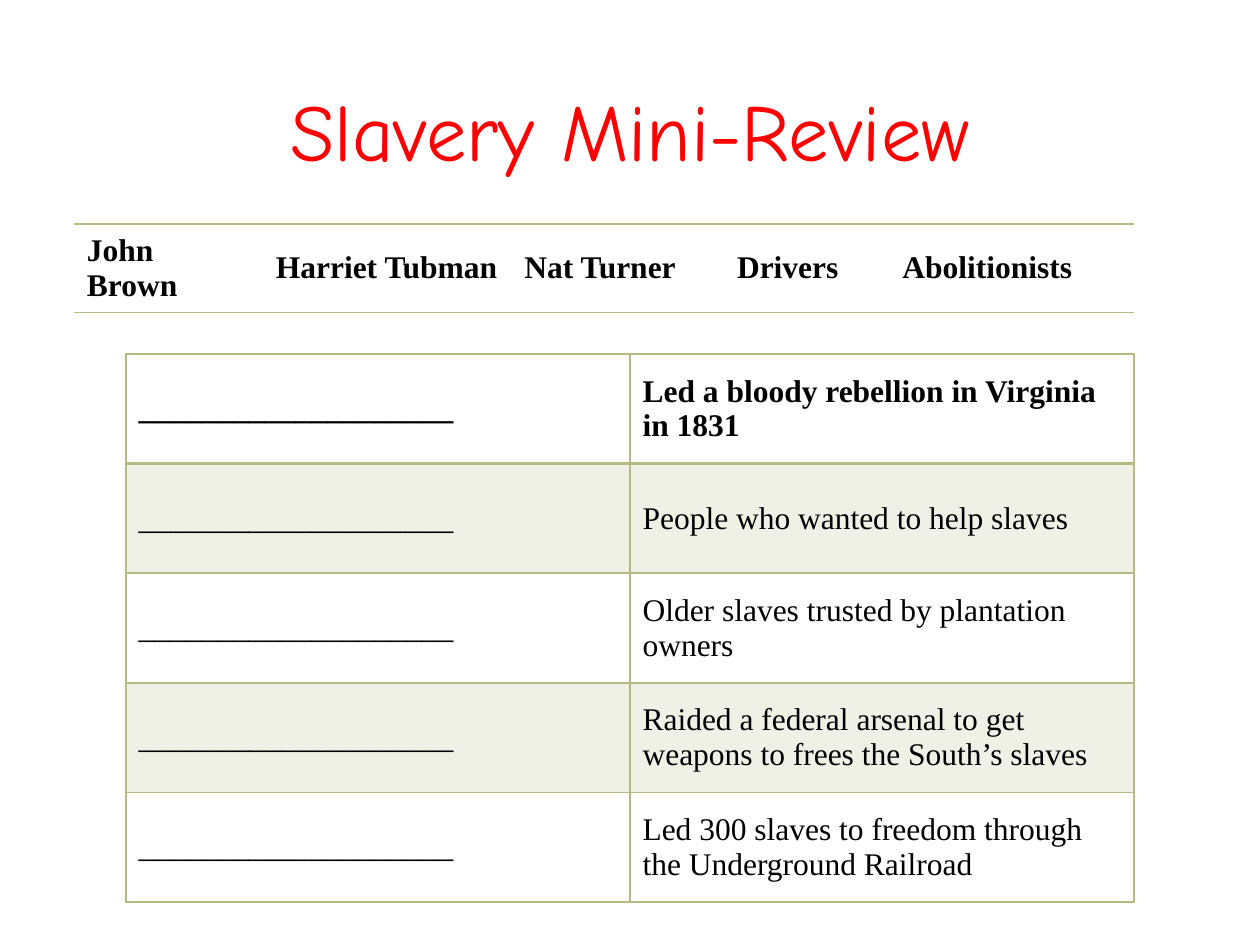
from lxml.etree import SubElement
from pptx import Presentation
from pptx.dml.color import RGBColor
from pptx.enum.text import MSO_ANCHOR as Anchor, PP_ALIGN as Align
from pptx.oxml.ns import qn
from pptx.util import Pt

TITLE = "Slavery Mini-Review"
WORD_BANK = ["John Brown", "Harriet Tubman", "Nat Turner", "Drivers", "Abolitionists"]
BANK_WIDTHS = [108, 142, 121.5, 94.5, 139.5]
CLUES = [
    "Led a bloody rebellion in Virginia in 1831",
    "People who wanted to help slaves",
    "Older slaves trusted by plantation owners",
    "Raided a federal arsenal to get weapons to frees the South’s slaves",
    "Led 300 slaves to freedom through the Underground Railroad",
]
ANSWER_LINE = "_" * 20
SAGE = "B5BB83"


def color(value):
    return RGBColor.from_string(value)


def add_run(paragraph, text, font, size, value, bold=False):
    run = paragraph.add_run()
    run.text = text
    run.font.name = font
    run.font.size = Pt(size)
    run.font.bold = bold
    run.font.color.rgb = color(value)


def set_borders(cell, widths):
    properties = cell._tc.get_or_add_tcPr()
    for side in "LRTB":
        width = widths.get(side, 0)
        line = SubElement(properties, qn(f"a:ln{side}"), w=str(Pt(width)))
        if width:
            fill = SubElement(line, qn("a:solidFill"))
            SubElement(fill, qn("a:srgbClr"), val=SAGE)
        else:
            SubElement(line, qn("a:noFill"))


def shade(cell, opacity):
    cell.fill.solid()
    cell.fill.fore_color.rgb = color(SAGE)
    tint = cell._tc.tcPr.find(f"{qn('a:solidFill')}/{qn('a:srgbClr')}")
    SubElement(tint, qn("a:alpha"), val=str(opacity * 1000))


def add_table(slide, left, top, widths, row_height, rows, borders, banded):
    frame = slide.shapes.add_table(len(rows), len(widths), Pt(left), Pt(top),
                                   Pt(sum(widths)), Pt(row_height * len(rows)))
    table = frame.table
    table.first_row = table.horz_banding = False
    for column, width in zip(table.columns, widths):
        column.width = Pt(width)
    for r, texts in enumerate(rows):
        table.rows[r].height = Pt(row_height)
        for c, text in enumerate(texts):
            cell = table.cell(r, c)
            cell.vertical_anchor = Anchor.MIDDLE
            add_run(cell.text_frame.paragraphs[0], text,
                    "Times New Roman", 18, "000000", bold=r == 0)
            set_borders(cell, borders(r))
            if banded and r % 2:
                shade(cell, 20)
            else:
                cell.fill.background()


def bank_borders(row):
    return {"T": 1, "B": 1}


def clue_borders(row):
    return {"L": 1, "R": 1, "T": 2 if row == 1 else 1, "B": 2 if row == 0 else 1}


def main():
    presentation = Presentation()
    presentation.slide_width, presentation.slide_height = Pt(720), Pt(540)
    slide = presentation.slides.add_slide(presentation.slide_layouts[6])

    title = slide.shapes.add_textbox(Pt(72), Pt(39.6), Pt(576), Pt(68.4))
    title.text_frame.word_wrap = True
    title.text_frame.vertical_anchor = Anchor.MIDDLE
    paragraph = title.text_frame.paragraphs[0]
    paragraph.alignment = Align.CENTER
    add_run(paragraph, TITLE, "Comic Neue", 46, "FF0000")

    clue_rows = [(ANSWER_LINE, clue) for clue in CLUES]
    add_table(slide, 72, 202.3, [288, 288], 62.64, clue_rows, clue_borders, True)
    add_table(slide, 42.5, 128, BANK_WIDTHS, 33.12, [WORD_BANK], bank_borders, False)

    presentation.save("out.pptx")


if __name__ == "__main__":
    main()
